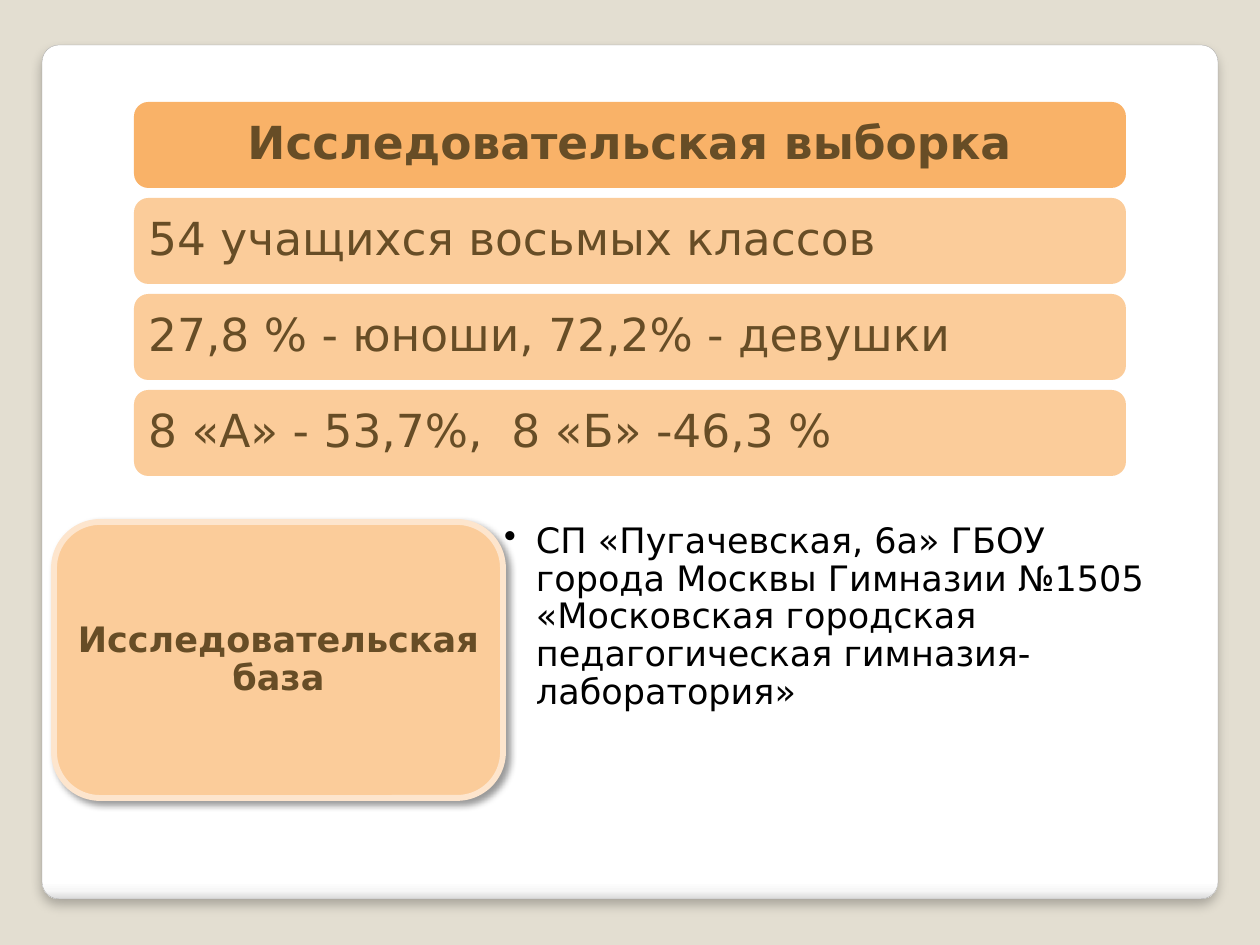
import dataclasses

import lxml.etree
import pptx
import pptx.dml.color
import pptx.enum.shapes
import pptx.enum.text
import pptx.oxml
import pptx.oxml.ns
import pptx.util

ALIGN = pptx.enum.text.PP_ALIGN
ANCHOR = pptx.enum.text.MSO_ANCHOR
NS = 'xmlns:a="http://schemas.openxmlformats.org/drawingml/2006/main"'


@dataclasses.dataclass(frozen=True)
class Theme:
    font: str = "DejaVu Sans"
    back: str = "E3DED1"
    edge: str = "A4A4A4"
    head: str = "F9B268"
    bar: str = "FBCC9A"
    rim: str = "FDE5CD"
    brown: str = "674D26"
    black: str = "000000"
    fade: tuple = ((0, "FFFFFF"), (98, "FFFFFF"), (99, "F7F7F7"), (100, "DADADA"))
    large: int = 26
    small: int = 20


THEME = Theme()


def px(count):
    return pptx.util.Emu(round(count * 914400 / 126))


def tint(code):
    return pptx.dml.color.RGBColor.from_string(code)


def place(shape, box):
    shape.left, shape.top, shape.width, shape.height = map(px, box)


def write(shape, text, size=THEME.small, color=THEME.brown, bold=False,
          align=ALIGN.LEFT, anchor=ANCHOR.MIDDLE, inset=0, bullet=None):
    frame = shape.text_frame
    frame.word_wrap = True
    frame.auto_size = pptx.enum.text.MSO_AUTO_SIZE.NONE
    frame.vertical_anchor = anchor
    frame.margin_left = frame.margin_right = px(inset)
    frame.margin_top = frame.margin_bottom = px(inset)
    para = frame.paragraphs[0]
    para.text = text
    para.alignment = align
    para.line_spacing = 0.9
    if bullet:
        props = para._p.get_or_add_pPr()
        props.set("marL", str(px(32)))
        props.set("indent", str(-px(32)))
        mark = lxml.etree.SubElement(props, pptx.oxml.ns.qn("a:buChar"))
        mark.set("char", bullet)
    font = para.runs[0].font
    font.name = THEME.font
    font.size = pptx.util.Pt(size)
    font.bold = bold
    font.color.rgb = tint(color)


def panel(slide, box, fill=None, fade=None, line=None, width=1, round_by=None):
    kind = pptx.enum.shapes.MSO_SHAPE.ROUNDED_RECTANGLE
    shape = slide.shapes.add_shape(kind, *map(px, box))
    if round_by is not None:
        shape.adjustments[0] = round_by
    if fade:
        stops = "".join(
            f'<a:gs pos="{spot * 1000}"><a:srgbClr val="{code}"/></a:gs>'
            for spot, code in fade)
        shape._element.spPr.append(pptx.oxml.parse_xml(
            f'<a:gradFill {NS} rotWithShape="1"><a:gsLst>{stops}</a:gsLst>'
            '<a:lin ang="5400000" scaled="0"/></a:gradFill>'))
    else:
        shape.fill.solid()
        shape.fill.fore_color.rgb = tint(fill)
    if line:
        shape.line.color.rgb = tint(line)
        shape.line.width = pptx.util.Pt(width)
    else:
        shape.line.fill.background()
    shape.shadow.inherit = False
    return shape


def shade(shape, alpha, blur, dist, angle):
    holder = shape._element.spPr.find(pptx.oxml.ns.qn("a:effectLst"))
    holder.append(pptx.oxml.parse_xml(
        f'<a:outerShdw {NS} blurRad="{pptx.util.Pt(blur)}" '
        f'dist="{pptx.util.Pt(dist)}" dir="{angle * 60000}" '
        'algn="tl" rotWithShape="0">'
        f'<a:srgbClr val="{THEME.black}"><a:alpha val="{alpha * 1000}"/>'
        '</a:srgbClr></a:outerShdw>'))


def header(slide, text, box):
    panel(slide, box, fill=THEME.head)
    title = slide.shapes.title
    place(title, box)
    write(title, text, size=THEME.large, bold=True, align=ALIGN.CENTER, inset=14)
    slide.shapes._spTree.append(title._element)


def main():
    deck = pptx.Presentation()
    deck.slide_width, deck.slide_height = px(1260), px(945)
    slide = deck.slides.add_slide(deck.slide_layouts[5])
    slide.background.fill.solid()
    slide.background.fill.fore_color.rgb = tint(THEME.back)

    card = panel(slide, (42, 45, 1176, 854), fade=THEME.fade,
                 line=THEME.edge, width=0.16, round_by=0.02)
    shade(card, alpha=25, blur=6, dist=4, angle=90)

    left, top, width, height, step = 134, 102, 992, 86, 96
    header(slide, "Исследовательская выборка", (left, top, width, height))
    facts = (
        "54 учащихся восьмых классов",
        "27,8 % - юноши, 72,2% - девушки",
        "8 «А» - 53,7%,  8 «Б» -46,3 %",
    )
    for row, fact in enumerate(facts, 1):
        bar = panel(slide, (left, top + row * step, width, height), fill=THEME.bar)
        write(bar, fact, size=THEME.large, inset=10)

    note = slide.shapes.add_textbox(*map(px, (503, 522, 673, 276)))
    write(note, "СП «Пугачевская, 6а» ГБОУ города Москвы Гимназии №1505 "
          "«Московская городская педагогическая гимназия-лаборатория»",
          color=THEME.black, anchor=ANCHOR.TOP, inset=1, bullet="•")
    base = panel(slide, (54, 522, 449, 276), fill=THEME.bar,
                 line=THEME.rim, width=3.35)
    shade(base, alpha=40, blur=4, dist=3, angle=45)
    write(base, "Исследовательская база", bold=True, align=ALIGN.CENTER)

    deck.save("out.pptx")


if __name__ == "__main__":
    main()
